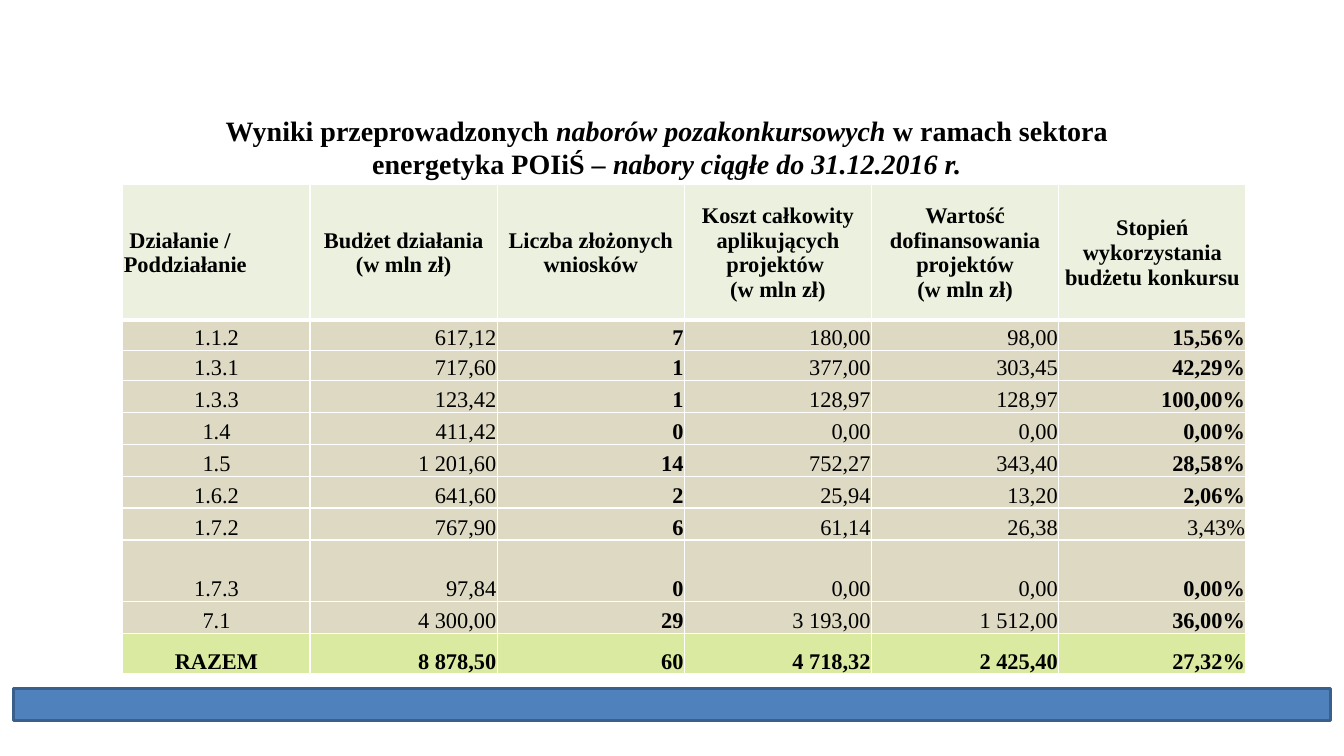
import pptx
import pptx.dml.color
import pptx.enum.shapes
import pptx.enum.text
import pptx.oxml
import pptx.oxml.ns
import pptx.util

Pt = pptx.util.Pt
ALIGN = pptx.enum.text.PP_ALIGN
ANCHOR = pptx.enum.text.MSO_ANCHOR

TITLE = [
    ("Wyniki przeprowadzonych ", False),
    ("naborów pozakonkursowych ", True),
    ("w ramach sektora energetyka POIiŚ – ", False),
    ("nabory ciągłe do 31.12.2016 r.", True),
]
ROWS = [
    [" Działanie / Poddziałanie", "Budżet działania (w mln zł)",
     "Liczba złożonych wniosków",
     "Koszt całkowity aplikujących projektów \v(w mln zł)",
     "Wartość dofinansowania projektów\n(w mln zł)",
     "Stopień wykorzystania budżetu konkursu"],
    ["1.1.2", "617,12", "7", "180,00", "98,00", "15,56%"],
    ["1.3.1", "717,60", "1", "377,00", "303,45", "42,29%"],
    ["1.3.3", "123,42", "1", "128,97", "128,97", "100,00%"],
    ["1.4", "411,42", "0", "0,00", "0,00", "0,00%"],
    ["1.5", "1 201,60", "14", "752,27", "343,40", "28,58%"],
    ["1.6.2", "641,60", "2", "25,94", "13,20", "2,06%"],
    ["1.7.2", "767,90", "6", "61,14", "26,38", "3,43%"],
    ["1.7.3", "97,84", "0", "0,00", "0,00", "0,00%"],
    ["7.1", "4 300,00", "29", "3 193,00", "1 512,00", "36,00%"],
    ["RAZEM", "8 878,50", "60", "4 718,32", "2 425,40", "27,32%"],
]
ROW_HEIGHTS = [97, 21.5, 21.5] + [22.8] * 5 + [44, 22.8, 29]
LAST_ROW = len(ROWS) - 1
BOLD_COLUMNS = (2, 5)
PLAIN_CELLS = {(7, 5)}


def color(value):
    return pptx.dml.color.RGBColor.from_string(value)


class ResultsPage:
    font = "Times New Roman"
    ink = "000000"
    white = "FFFFFF"
    header_fill = "EBF1DE"
    body_fill = "DDD9C3"
    total_fill = "DAEAA0"

    def __init__(self, deck):
        self.page = deck.slides.add_slide(deck.slide_layouts[5])

    def style(self, paragraph, size, bold, align):
        paragraph.alignment = align
        paragraph.font.name = self.font
        paragraph.font.size = Pt(size)
        paragraph.font.bold = bold
        paragraph.font.color.rgb = color(self.ink)

    def title(self, spans, left, top, width, height):
        box = self.page.shapes.title
        box.left, box.top, box.width, box.height = map(Pt, (left, top, width, height))
        frame = box.text_frame
        frame.word_wrap = True
        frame.auto_size = pptx.enum.text.MSO_AUTO_SIZE.NONE
        frame.vertical_anchor = ANCHOR.BOTTOM
        para = frame.paragraphs[0]
        self.style(para, 20, True, ALIGN.CENTER)
        for text, italic in spans:
            span = para.add_run()
            span.text = text
            span.font.italic = italic

    def bar(self, left, top, width, height, fill, line):
        bar = self.page.shapes.add_shape(
            pptx.enum.shapes.MSO_SHAPE.FLOWCHART_PROCESS,
            *map(Pt, (left, top, width, height)))
        bar.shadow.inherit = False
        bar.fill.solid()
        bar.fill.fore_color.rgb = color(fill)
        bar.line.color.rgb = color(line)
        bar.line.width = Pt(2)

    def borders(self, cell, widths):
        """Draw white edges; widths are left, right, top, bottom."""
        properties = cell._tc.get_or_add_tcPr()
        for side, width in zip("LRTB", widths):
            properties.append(pptx.oxml.parse_xml(
                f'<a:ln{side} {pptx.oxml.ns.nsdecls("a")} w="{Pt(width)}">'
                f'<a:solidFill><a:srgbClr val="{self.white}"/></a:solidFill></a:ln{side}>'))

    def cell(self, cell, text, row, column):
        header, total = row == 0, row == LAST_ROW
        self.borders(cell, (1, 1, 3 if row == 1 else 1, 3 if header else 1))
        cell.fill.solid()
        cell.fill.fore_color.rgb = color(
            self.header_fill if header else self.total_fill if total else self.body_fill)
        cell.margin_left = cell.margin_right = cell.margin_top = Pt(0.7)
        cell.margin_bottom = 0
        cell.vertical_anchor = ANCHOR.MIDDLE if header else ANCHOR.BOTTOM
        if header:
            align = ALIGN.CENTER if column else ALIGN.LEFT
        else:
            align = ALIGN.RIGHT if column else ALIGN.CENTER
        bold = header or total or (
            column in BOLD_COLUMNS and (row, column) not in PLAIN_CELLS)
        cell.text_frame.text = text
        for para in cell.text_frame.paragraphs:
            self.style(para, 16, bold, align)

    def table(self, rows, heights, left, top, width):
        columns = len(rows[0])
        table = self.page.shapes.add_table(
            len(rows), columns, *map(Pt, (left, top, width, sum(heights)))).table
        for column in table.columns:
            column.width = Pt(width / columns)
        for row, (texts, height) in enumerate(zip(rows, heights)):
            table.rows[row].height = Pt(height)
            for column, text in enumerate(texts):
                self.cell(table.cell(row, column), text, row, column)


def main():
    deck = pptx.Presentation()
    deck.slide_width, deck.slide_height = Pt(960), Pt(540)
    results = ResultsPage(deck)
    results.bar(9.4, 491.8, 941, 22.6, "4F81BD", "3A5F8C")
    results.table(ROWS, ROW_HEIGHTS, 87.8, 131.8, 802.2)
    results.title(TITLE, 121.7, 54.7, 709.2, 77.8)
    deck.save("out.pptx")


if __name__ == "__main__":
    main()
